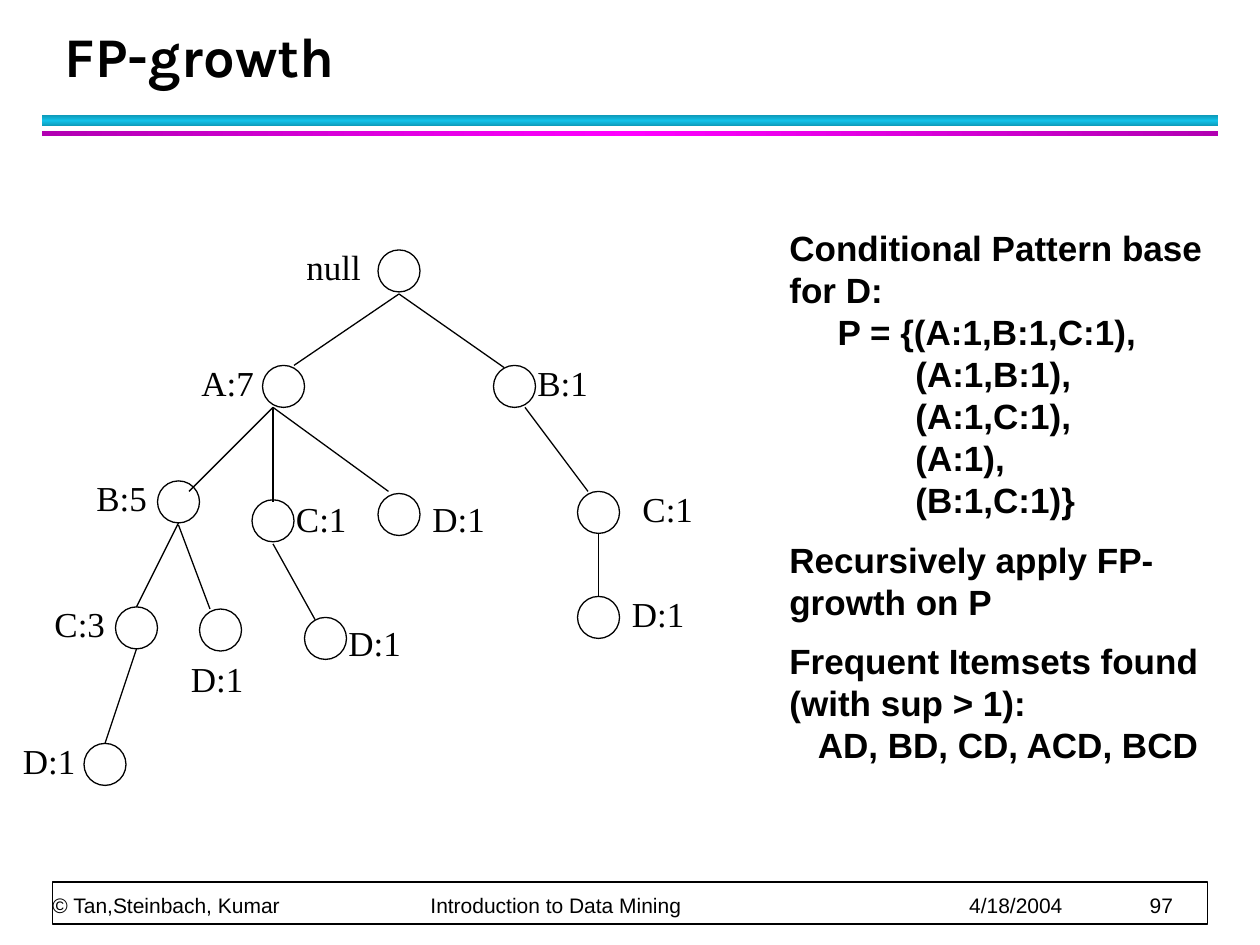
import copy
import pptx
import pptx.util
import pptx.oxml
import pptx.oxml.ns
import pptx.dml.color
import pptx.enum.shapes
import pptx.enum.text

KINDS = pptx.enum.shapes.MSO_SHAPE
ANCHOR = pptx.enum.text.MSO_ANCHOR
RGB = pptx.dml.color.RGBColor.from_string
Pt = pptx.util.Pt
qn = pptx.oxml.ns.qn

THEME = {
    "ink": RGB("000000"), "paper": RGB("FFFFFF"),
    "cyan": ("0E9BBA", "12C2E9", "0E9BBA"),
    "pink": ("B200B2", "FF00FF", "B200B2"),
    "head": ("Karla", 32, 36, True),  # font, size, line pitch, bold
    "body": ("Arial", 20, 24, True),
    "label": ("Times New Roman", 20, 24, False),
    "foot": ("Arial", 12, 20, False),
}

deck = pptx.Presentation()
deck.slide_width = pptx.util.Inches(10)
deck.slide_height = pptx.util.Inches(7.5)
slide = deck.slides.add_slide(deck.slide_layouts[6])
shapes = slide.shapes
CELL = deck.slide_width / 120  # the slide is 120 columns by 90 rows


def grid(*cells):
    return [round(cell * CELL) for cell in cells]


def write(box, style, lines, anchor=ANCHOR.TOP, inset=True):
    """Fill a box with lines of (text, indent in columns, space before)."""
    font, size, pitch, bold = THEME[style]
    frame = box.text_frame
    frame.word_wrap = True
    frame.vertical_anchor = anchor
    if not inset:
        frame.margin_left = frame.margin_right = 0
        frame.margin_top = frame.margin_bottom = 0
    for index, (text, indent, gap) in enumerate(lines):
        para = frame.add_paragraph() if index else frame.paragraphs[0]
        para.line_spacing = Pt(pitch)
        para.space_before = Pt(gap)
        para._p.get_or_add_pPr().set("marL", str(grid(indent)[0]))
        run = para.add_run()
        run.text = text
        run.font.name, run.font.size, run.font.bold = font, Pt(size), bold
        run.font.color.rgb = THEME["ink"]


# Twin bars under the title
for hue, row, high, angle in (("cyan", 11, 1, 90), ("pink", 12.5, 0.5, 0)):
    bar = shapes.add_shape(KINDS.RECTANGLE, *grid(4, row, 112, high))
    bar.shadow.inherit = False
    bar.line.fill.background()
    bar.fill.gradient()
    bar.fill.gradient_angle = angle
    stops = bar._element.spPr.find(".//" + qn("a:gsLst"))
    stops.insert(1, copy.deepcopy(stops[0]))
    for stop, shade, place in zip(bar.fill.gradient_stops, THEME[hue], (0, 0.5, 1)):
        stop.color.rgb = RGB(shade)
        stop.position = place

# Footer, its parts set on tab stops
frame = shapes.add_shape(KINDS.RECTANGLE, *grid(5, 84, 110, 4))
frame.shadow.inherit = False
frame.fill.solid()
frame.fill.fore_color.rgb = THEME["paper"]
frame.line.color.rgb = THEME["ink"]
frame.line.width = Pt(1)
foot = shapes.add_textbox(*grid(5, 84, 110, 3.4))
parts = ("© Tan,Steinbach, Kumar", "Introduction to Data Mining", "4/18/2004", "97")
write(foot, "foot", [("\t".join(parts), 0, 0)], ANCHOR.BOTTOM, inset=False)
props = foot.text_frame.paragraphs[0]._p.get_or_add_pPr()
tabs = pptx.oxml.parse_xml("<a:tabLst %s/>" % pptx.oxml.ns.nsdecls("a"))
for column in (36, 87.3, 104.5):
    tab = tabs.makeelement(qn("a:tab"), {"pos": str(grid(column)[0]), "algn": "l"})
    tabs.append(tab)
props.append(tabs)

title = shapes.add_textbox(*grid(5, 2, 108.7, 7))
write(title, "head", [("FP-growth", 0, 0)], ANCHOR.BOTTOM)

# Tree branches: start and end, in columns and rows
branches = (
    (38, 28, 28, 34.8), (38, 28, 48, 35),
    (26, 38.8, 18, 46.8), (26, 38.8, 26, 47.8), (26, 38.8, 37, 46.8),
    (50, 38.8, 56, 46.8), (57, 50.8, 57, 56.8), (26, 51.8, 30, 59),
    (17, 49.8, 13, 57.8), (17, 50, 20, 58), (13, 61.8, 10, 70.8),
)
for ends in branches:
    branch = shapes.add_connector(pptx.enum.shapes.MSO_CONNECTOR.STRAIGHT, *grid(*ends))
    branch.line.color.rgb = THEME["ink"]
    branch.line.width = Pt(0.75)
    props = branch._element.spPr
    props.append(props.makeelement(qn("a:effectLst"), {}))

# Tree nodes: label, place of the circle, place of the label
nodes = (
    ("null", 36, 23.8, 28, 22.8),
    ("A:7", 25, 34.8, 18, 33.8), ("B:1", 47, 34.8, 50, 33.8),
    ("B:5", 15, 45.8, 8, 44.8), ("C:1", 24, 47.6, 27, 46.8),
    ("D:1", 36, 47, 40, 46.8), ("C:1", 55, 46.8, 60, 45.8),
    ("C:3", 11, 57.8, 4, 56.8), ("D:1", 19, 58, 17, 62),
    ("D:1", 29, 58.8, 32, 58.6), ("D:1", 55, 56.8, 59, 55.8),
    ("D:1", 8, 70.8, 1, 69.8),
)
for text, column, row, left, top in nodes:
    node = shapes.add_shape(KINDS.OVAL, *grid(column, row, 4, 4))
    node.shadow.inherit = False
    node.fill.background()
    node.line.color.rgb = THEME["ink"]
    node.line.width = Pt(0.75)
    write(shapes.add_textbox(*grid(left, top, 8, 5.2)), "label", [(text, 0, 0)])

# Steps on the right
steps = (
    ("Conditional Pattern base for D:", 0, 0),
    ("P = {(A:1,B:1,C:1),", 4.6, 0),
    ("(A:1,B:1),", 12, 0),
    ("(A:1,C:1),", 12, 0),
    ("(A:1),", 12, 0),
    ("(B:1,C:1)}", 12, 0),
    ("Recursively apply FP-growth on P", 0, 10),
    ("Frequent Itemsets found (with sup > 1):", 0, 10),
    ("AD, BD, CD, ACD, BCD", 2.7, 0),
)
write(shapes.add_textbox(*grid(74, 21, 44, 53.2)), "body", steps)

deck.save("out.pptx")
